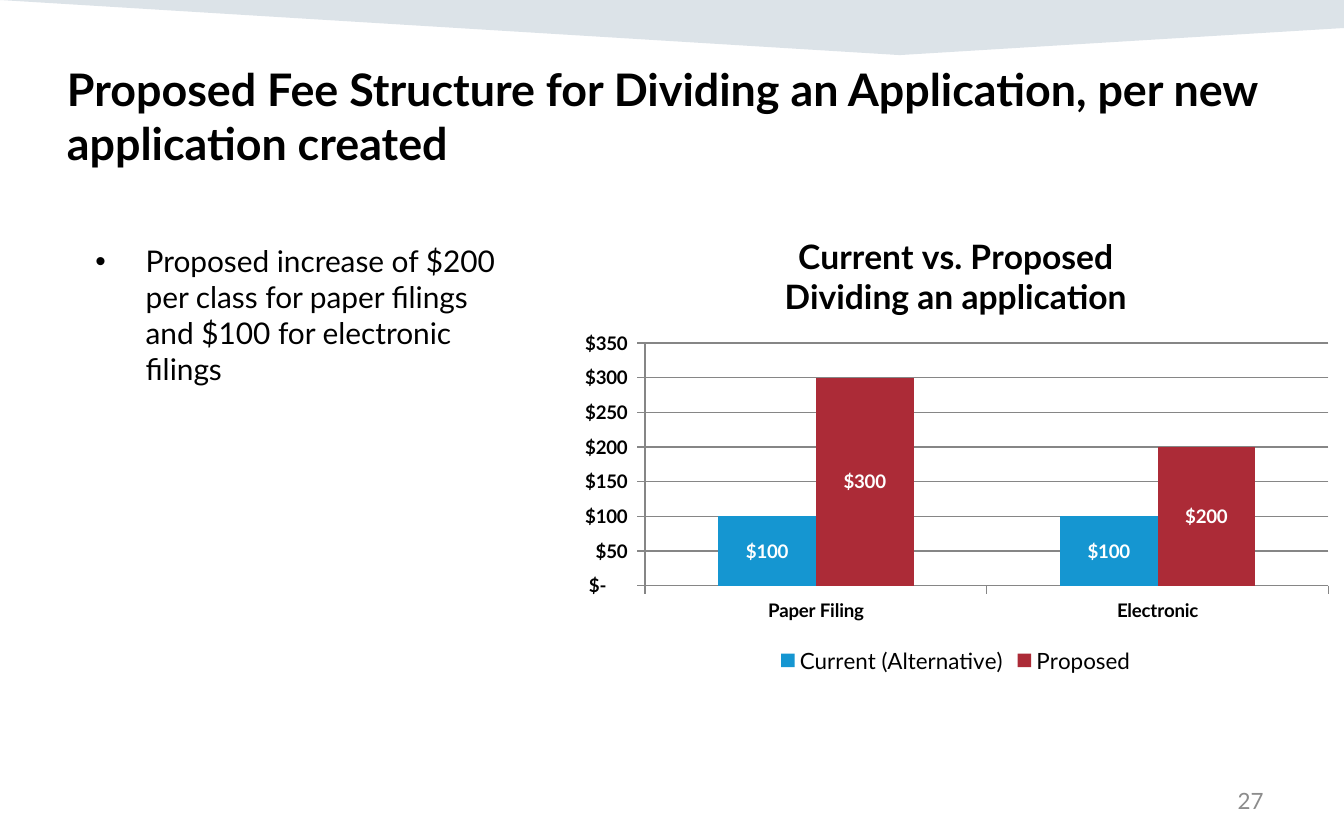
from dataclasses import dataclass

from lxml import etree
from pptx import Presentation
from pptx.chart.data import CategoryChartData
from pptx.dml.color import RGBColor
from pptx.enum.chart import XL_CHART_TYPE, XL_LABEL_POSITION, XL_LEGEND_POSITION, XL_TICK_MARK
from pptx.enum.text import MSO_ANCHOR, PP_ALIGN
from pptx.oxml.ns import qn
from pptx.util import Pt

COLUMNS = XL_CHART_TYPE.COLUMN_CLUSTERED
CENTER = XL_LABEL_POSITION.CENTER
BOTTOM = XL_LEGEND_POSITION.BOTTOM
OUTSIDE = XL_TICK_MARK.OUTSIDE
LEFT, RIGHT = PP_ALIGN.LEFT, PP_ALIGN.RIGHT
TOP, MIDDLE = MSO_ANCHOR.TOP, MSO_ANCHOR.MIDDLE

DOLLARS = r'_("$"* #,##0_);_("$"* \(#,##0\);_("$"* "-"??_);_(@_)'


@dataclass(frozen=True)
class Theme:
    font: str = "Lato"
    text: str = "000000"
    muted: str = "8C8C8C"
    grid: str = "868686"
    banner: str = "164469"
    banner_opacity: int = 15
    current: str = "1596D1"
    proposed: str = "AC2B37"
    label: str = "FFFFFF"
    title_size: int = 24
    chart_title_size: int = 18
    body_size: int = 16
    small_size: int = 12
    chart_size: int = 10


THEME = Theme()


def style_font(font, size, color=THEME.text, bold=False):
    font.name = THEME.font
    font.size = Pt(size)
    font.bold = bold
    font.color.rgb = RGBColor.from_string(color)


def add_text(slide, box, text, size, color=THEME.text, bold=False,
             align=LEFT, anchor=TOP, bullet_indent=None):
    frame = slide.shapes.add_textbox(*map(Pt, box)).text_frame
    frame.word_wrap = True
    frame.vertical_anchor = anchor
    frame.text = text
    paragraph = frame.paragraphs[0]
    paragraph.alignment = align
    if bullet_indent:
        add_bullet(paragraph, Pt(bullet_indent))
    style_font(paragraph.runs[0].font, size, color, bold)


def add_bullet(paragraph, indent):
    properties = paragraph._p.get_or_add_pPr()
    properties.set("marL", str(indent))
    properties.set("indent", str(-indent))
    etree.SubElement(properties, qn("a:buFont")).set("typeface", "Arial")
    etree.SubElement(properties, qn("a:buChar")).set("char", "•")


def add_banner(slide, corners):
    points = [(Pt(x), Pt(y)) for x, y in corners]
    builder = slide.shapes.build_freeform(*points[0])
    builder.add_line_segments(points[1:], close=True)
    banner = builder.convert_to_shape()
    banner.shadow.inherit = False
    banner.line.fill.background()
    banner.fill.solid()
    banner.fill.fore_color.rgb = RGBColor.from_string(THEME.banner)
    color = banner.fill._xPr.find(".//" + qn("a:srgbClr"))
    etree.SubElement(color, qn("a:alpha")).set("val", str(THEME.banner_opacity * 1000))


def place_plot(chart, **fractions):
    """Fix the inner plot area as fractions of the chart frame."""
    plot_area = chart._chartSpace.chart.plotArea
    for old in plot_area.findall(qn("c:layout")):
        plot_area.remove(old)
    layout = etree.Element(qn("c:layout"))
    manual = etree.SubElement(layout, qn("c:manualLayout"))
    settings = {"layoutTarget": "inner", "xMode": "edge", "yMode": "edge", **fractions}
    for name, value in settings.items():
        etree.SubElement(manual, qn("c:" + name)).set("val", str(value))
    plot_area.insert(0, layout)


def style_axis(axis):
    axis.major_tick_mark = OUTSIDE
    axis.format.line.color.rgb = RGBColor.from_string(THEME.grid)
    style_font(axis.tick_labels.font, THEME.chart_size, bold=True)


def style_series(series, color):
    series.format.fill.solid()
    series.format.fill.fore_color.rgb = RGBColor.from_string(color)
    labels = series.data_labels
    labels.show_value = True
    labels.position = CENTER
    labels.number_format = DOLLARS
    labels.number_format_is_linked = False
    style_font(labels.font, THEME.chart_size, THEME.label, bold=True)


def add_fee_chart(slide, box, title, categories, fees):
    data = CategoryChartData(number_format=DOLLARS)
    data.categories = categories
    for name, values, _ in fees:
        data.add_series(name, values)
    chart = slide.shapes.add_chart(COLUMNS, *map(Pt, box), data).chart
    style_font(chart.font, THEME.chart_size)

    # Title and legend
    chart.has_title = True
    heading = chart.chart_title.text_frame
    heading.text = title
    for paragraph in heading.paragraphs:
        style_font(paragraph.runs[0].font, THEME.chart_title_size, bold=True)
    chart.chart_title.include_in_layout = False
    chart.has_legend = True
    chart.legend.position = BOTTOM
    chart.legend.include_in_layout = False
    style_font(chart.legend.font, THEME.small_size)

    # Axes
    style_axis(chart.category_axis)
    fee_axis = chart.value_axis
    style_axis(fee_axis)
    fee_axis.minimum_scale, fee_axis.maximum_scale, fee_axis.major_unit = 0, 350, 50
    fee_axis.tick_labels.number_format = DOLLARS
    fee_axis.tick_labels.number_format_is_linked = False
    fee_axis.major_gridlines.format.line.color.rgb = RGBColor.from_string(THEME.grid)

    # Columns
    plot = chart.plots[0]
    plot.gap_width = 150
    plot.overlap = 0
    plot.vary_by_categories = False
    for series, (_, _, color) in zip(plot.series, fees):
        style_series(series, color)
    place_plot(chart, x=0.1, y=0.28, w=0.88, h=0.52)


def main():
    deck = Presentation()
    deck.slide_width, deck.slide_height = Pt(720), Pt(450)
    slide = deck.slides.add_slide(deck.slide_layouts[6])

    # Banner and heading
    add_banner(slide, [(0, 0), (720, 0), (720, 15), (482, 29.5)])
    add_text(slide, (28.8, 29.5, 670, 37),
             "Proposed Fee Structure for Dividing an Application, per new application created",
             THEME.title_size, bold=True)

    # Explanation
    add_text(slide, (44, 126.7, 235.5, 258),
             "Proposed increase of $200 per class for paper filings and $100 for electronic filings",
             THEME.body_size, bullet_indent=27)

    # Fee comparison
    add_fee_chart(slide, (304, 113.8, 416, 250),
                  "Current vs. Proposed\nDividing an application",
                  ["Paper Filing", "Electronic"],
                  [("Current (Alternative)", (100, 100), THEME.current),
                   ("Proposed", (300, 200), THEME.proposed)])

    # Page number
    add_text(slide, (516, 417, 168, 24), "27", THEME.small_size, THEME.muted,
             align=RIGHT, anchor=MIDDLE)

    deck.save("out.pptx")


if __name__ == "__main__":
    main()
